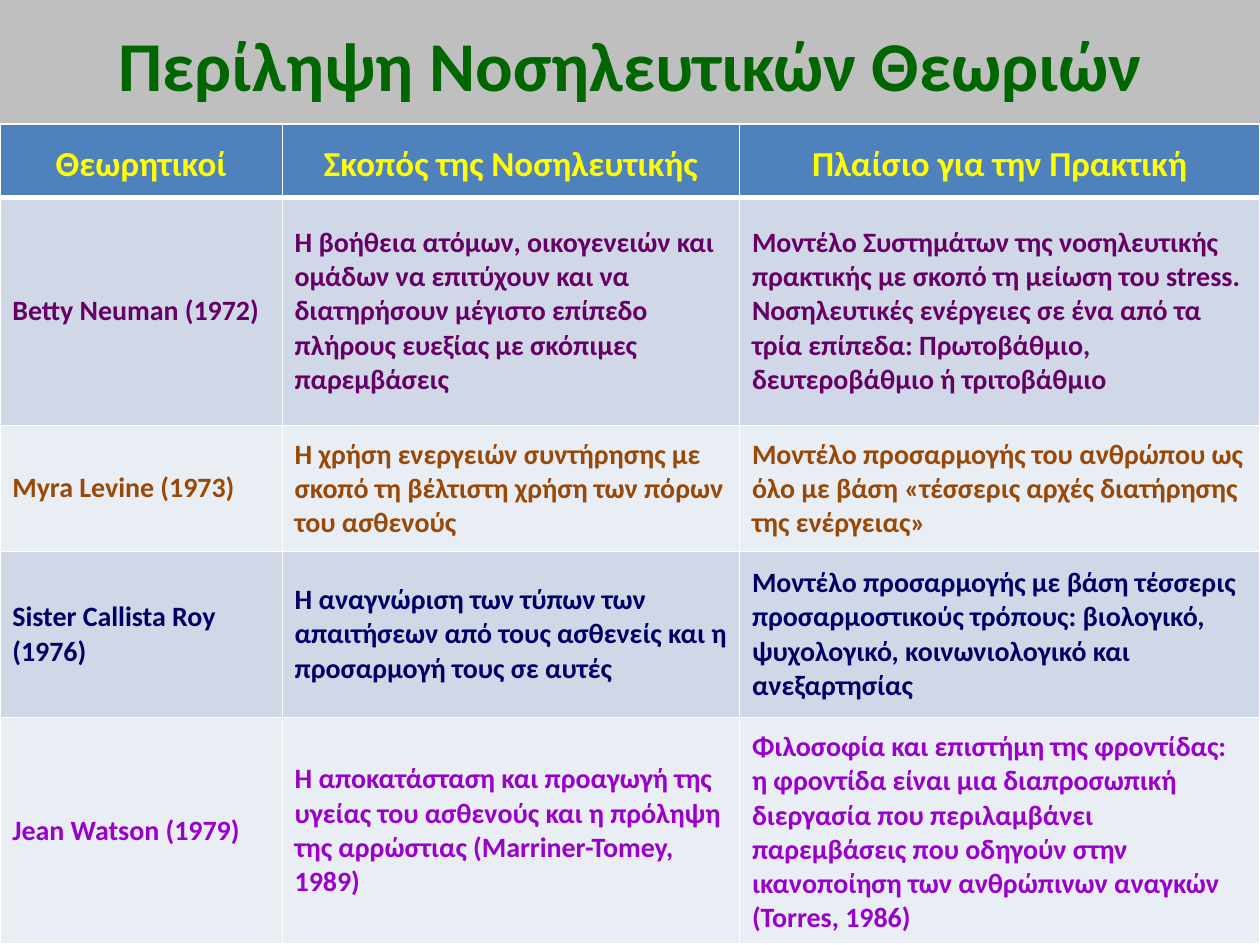
from dataclasses import dataclass

from lxml import etree
from pptx import Presentation
from pptx import util as u
from pptx.dml.color import RGBColor
from pptx.enum import text as t
from pptx.oxml import ns


@dataclass(frozen=True)
class Theme:
    """Colours and type sizes of the slide."""
    font: str = "Calibri"
    back: str = "BFBFBF"
    title: str = "006600"
    head: str = "FFFF00"
    bar: str = "4F81BD"
    bands: tuple = ("D0D8E8", "E9EDF4")
    inks: tuple = ("660066", "984807", "000066", "9900CC")
    rule: str = "FFFFFF"
    big: int = 40
    mid: int = 20
    small: int = 16


LOOK = Theme()
PAD = u.Cm(0.25)
COLS = (5.69, 9.22, 10.49)
ROWS = (1.47, 4.6, 2.54, 3.35, 4.52)
HEADS = ("Θεωρητικοί", "Σκοπός της Νοσηλευτικής", "Πλαίσιο για την Πρακτική")
BODY = (
    ("Betty Neuman (1972)",
     "Η βοήθεια ατόμων, οικογενειών και ομάδων να επιτύχουν και να "
     "διατηρήσουν μέγιστο επίπεδο πλήρους ευεξίας με σκόπιμες παρεμβάσεις",
     "Μοντέλο Συστημάτων της νοσηλευτικής πρακτικής με σκοπό τη μείωση του "
     "stress. Νοσηλευτικές ενέργειες σε ένα από τα τρία επίπεδα: "
     "Πρωτοβάθμιο, δευτεροβάθμιο ή τριτοβάθμιο"),
    ("Myra Levine (1973)",
     "Η χρήση ενεργειών συντήρησης με σκοπό τη βέλτιστη χρήση των πόρων "
     "του ασθενούς",
     "Μοντέλο προσαρμογής του ανθρώπου ως όλο με βάση «τέσσερις αρχές "
     "διατήρησης της ενέργειας»"),
    ("Sister Callista Roy (1976)",
     "Η αναγνώριση των τύπων των απαιτήσεων από τους ασθενείς και η "
     "προσαρμογή τους σε αυτές",
     "Μοντέλο προσαρμογής με βάση τέσσερις προσαρμοστικούς τρόπους: "
     "βιολογικό, ψυχολογικό, κοινωνιολογικό και ανεξαρτησίας"),
    ("Jean Watson (1979)",
     "Η αποκατάσταση και προαγωγή της υγείας του ασθενούς και η πρόληψη "
     "της αρρώστιας (Marriner-Tomey, 1989)",
     "Φιλοσοφία και επιστήμη της φροντίδας: η φροντίδα είναι μια "
     "διαπροσωπική διεργασία που περιλαμβάνει παρεμβάσεις που οδηγούν στην "
     "ικανοποίηση των ανθρώπινων αναγκών (Torres, 1986)"),
)


def paint(fill, tint):
    """Give a fill one solid colour."""
    fill.solid()
    fill.fore_color.rgb = RGBColor.from_string(tint)


def write(frame, words, size, ink, align=t.PP_ALIGN.LEFT, space=None):
    """Put bold text in a frame."""
    frame.word_wrap = True
    para = frame.paragraphs[0]
    para.alignment = align
    para.line_spacing = space
    run = para.add_run()
    run.text = words
    run.font.name = LOOK.font
    run.font.size = u.Pt(size)
    run.font.bold = True
    run.font.color.rgb = RGBColor.from_string(ink)


def edge(cell, top, base):
    """Draw the four borders of a cell, widths in points."""
    props = cell._tc.get_or_add_tcPr()
    sides = (("L", 1), ("R", 1), ("T", top), ("B", base))
    for spot, (side, width) in enumerate(sides):
        line = etree.Element(ns.qn(f"a:ln{side}"), w=str(u.Pt(width)))
        fill = etree.SubElement(line, ns.qn("a:solidFill"))
        etree.SubElement(fill, ns.qn("a:srgbClr"), val=LOOK.rule)
        props.insert(spot, line)


def dress(cell, tint, top=1, base=1):
    """Set fill, insets, anchor and borders of a cell."""
    paint(cell.fill, tint)
    cell.margin_left = cell.margin_right = PAD
    cell.margin_top = cell.margin_bottom = PAD
    cell.vertical_anchor = t.MSO_ANCHOR.MIDDLE
    edge(cell, top, base)


def add_title(slide):
    """Add the centred heading."""
    box = slide.shapes.add_textbox(
        u.Cm(1.27), u.Cm(0.43), u.Cm(22.86), u.Cm(1.7))
    box.text_frame.vertical_anchor = t.MSO_ANCHOR.MIDDLE
    write(box.text_frame, "Περίληψη Νοσηλευτικών Θεωριών",
          LOOK.big, LOOK.title, t.PP_ALIGN.CENTER)


def add_grid(slide):
    """Add the table of theorists."""
    grid = slide.shapes.add_table(
        len(ROWS), len(COLS), 0, u.Cm(2.5),
        u.Cm(sum(COLS)), u.Cm(sum(ROWS))).table
    for col, width in zip(grid.columns, COLS):
        col.width = u.Cm(width)
    for row, height in zip(grid.rows, ROWS):
        row.height = u.Cm(height)
    for cell, words in zip(grid.rows[0].cells, HEADS):
        dress(cell, LOOK.bar, base=3)
        write(cell.text_frame, words, LOOK.mid, LOOK.head,
              t.PP_ALIGN.CENTER, space=1.15)
    for num, (line, ink) in enumerate(zip(BODY, LOOK.inks)):
        for cell, words in zip(grid.rows[num + 1].cells, line):
            dress(cell, LOOK.bands[num % 2], top=1 if num else 3)
            write(cell.text_frame, words, LOOK.small, ink)


def main():
    """Build and save the slide."""
    deck = Presentation()
    deck.slide_width, deck.slide_height = u.Cm(25.4), u.Cm(19.05)
    slide = deck.slides.add_slide(deck.slide_layouts[6])
    paint(slide.background.fill, LOOK.back)
    add_title(slide)
    add_grid(slide)
    deck.save("out.pptx")


if __name__ == "__main__":
    main()
